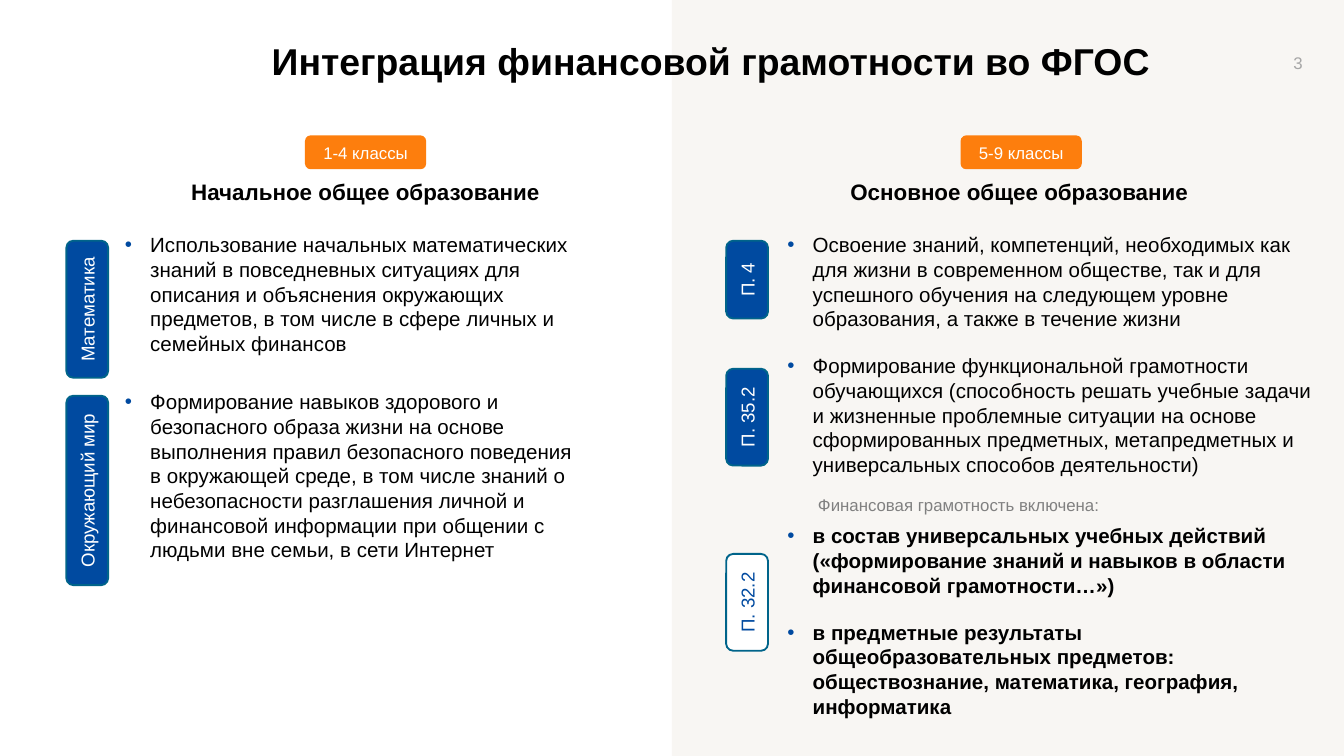
from lxml import etree
from pptx import Presentation
from pptx.dml.color import RGBColor
from pptx.enum.shapes import MSO_SHAPE
from pptx.enum.text import MSO_ANCHOR, PP_ALIGN
from pptx.oxml.ns import qn
from pptx.util import Cm, Pt

RECT, ROUNDED = MSO_SHAPE.RECTANGLE, MSO_SHAPE.ROUNDED_RECTANGLE
LEFT, CENTER, RIGHT = PP_ALIGN.LEFT, PP_ALIGN.CENTER, PP_ALIGN.RIGHT
TOP, MIDDLE = MSO_ANCHOR.TOP, MSO_ANCHOR.MIDDLE
BLACK, WHITE, BLUE, TEAL = "000000", "FFFFFF", "004AA0", "00648A"
ORANGE, CREAM, GREY, LIGHT_GREY = "FD7E0D", "F8F6F3", "808080", "A6A6A6"


def rgb(color):
    return RGBColor.from_string(color)


def write(p, text, size, color=BLACK, bold=False, align=LEFT):
    """Add one formatted run to a paragraph."""
    p.alignment = align
    r = p.add_run()
    r.text = text
    r.font.name = "Arial"
    r.font.size = Pt(size)
    r.font.bold = bold
    r.font.color.rgb = rgb(color)


prs = Presentation()
prs.slide_width, prs.slide_height = Cm(25.4), Cm(14.29)
s = prs.slides.add_slide(prs.slide_layouts[5])

# Right half background, behind the title
panel = s.shapes.add_shape(RECT, Cm(12.7), 0, Cm(12.7), prs.slide_height)
panel.shadow.inherit = False
panel.fill.solid()
panel.fill.fore_color.rgb = rgb(CREAM)
panel.line.fill.background()
s.shapes._spTree.insert(2, panel._element)

title = s.shapes.title
title.left, title.top, title.width, title.height = Cm(4.88), Cm(0.61), Cm(18.24), Cm(1.19)
title.text_frame.vertical_anchor = MIDDLE
title.text_frame.paragraphs[0].line_spacing = 0.9
write(title.text_frame.paragraphs[0], "Интеграция финансовой грамотности во ФГОС", 20, bold=True)

# Single-line texts: page number, column headings, note
for text, x, y, w, h, size, color, bold, align, anchor in [
    ("3", 23.65, 0.81, 1.22, 0.76, 9, LIGHT_GREY, False, RIGHT, MIDDLE),
    ("Начальное общее образование", 3.33, 3.25, 7.16, 0.76, 12, BLACK, True, CENTER, TOP),
    ("Основное общее образование", 15.82, 3.25, 6.96, 0.76, 12, BLACK, True, LEFT, TOP),
    ("Финансовая грамотность включена:", 15.21, 9.22, 5.89, 0.64, 9, GREY, False, LEFT, TOP),
]:
    tf = s.shapes.add_textbox(Cm(x), Cm(y), Cm(w), Cm(h)).text_frame
    tf.vertical_anchor = anchor
    write(tf.paragraphs[0], text, size, color, bold, align)

# Bulleted columns: (text, bold, space before)
primary = [
    ("Использование начальных математических знаний в повседневных ситуациях для описания "
     "и объяснения окружающих предметов, в том числе в сфере личных и семейных финансов", False, 0),
    ("Формирование навыков здорового и безопасного образа жизни на основе выполнения правил "
     "безопасного поведения в окружающей среде, в том числе знаний о небезопасности разглашения "
     "личной и финансовой информации при общении с людьми вне семьи, в сети Интернет", False, 18),
]
secondary = [
    ("Освоение знаний, компетенций, необходимых как для жизни в современном обществе, так и для "
     "успешного обучения на следующем уровне образования, а также в течение жизни", False, 0),
    ("Формирование функциональной грамотности обучающихся (способность решать учебные задачи "
     "и жизненные проблемные ситуации на основе сформированных предметных, метапредметных "
     "и универсальных способов деятельности)", False, 12),
    ("в состав универсальных учебных действий («формирование знаний и навыков в области "
     "финансовой грамотности…»)", True, 25),
    ("в предметные результаты общеобразовательных предметов: обществознание, математика, "
     "география, информатика", True, 12),
]
for x, w, h, items in [(2.11, 9.17, 6.53, primary), (14.63, 10.44, 9.53, secondary)]:
    tf = s.shapes.add_textbox(Cm(x), Cm(4.27), Cm(w), Cm(h)).text_frame
    tf.word_wrap = True
    for i, (text, bold, gap) in enumerate(items):
        p = tf.paragraphs[0] if i == 0 else tf.add_paragraph()
        pPr = p._p.get_or_add_pPr()
        pPr.set("marL", str(Cm(0.48)))
        pPr.set("indent", str(-Cm(0.48)))
        clr = etree.SubElement(pPr, qn("a:buClr"))
        etree.SubElement(clr, qn("a:srgbClr"), val=BLUE)
        etree.SubElement(pPr, qn("a:buFont"), typeface="Arial")
        etree.SubElement(pPr, qn("a:buChar"), char="•")
        p.space_before = Pt(gap)
        write(p, text, 11, bold=bold)

# Badges: (text, centre x, centre y, length, thickness, rotation, size, fill, line, text colour)
badges = [(text, x, 2.88, 2.29, 0.64, 0, 9, ORANGE, None, WHITE)
          for text, x in [("1-4 классы", 6.91), ("5-9 классы", 19.3)]]
badges += [(text, x, top + length / 2, length, 0.79, 270, 10, fill, TEAL, color)
           for text, x, top, length, fill, color in [
               ("Математика", 1.65, 4.55, 2.59, BLUE, WHITE),
               ("Окружающий мир", 1.65, 7.48, 3.58, BLUE, WHITE),
               ("П. 4", 14.12, 4.55, 1.47, BLUE, WHITE),
               ("П. 35.2", 14.12, 6.97, 1.83, BLUE, WHITE),
               ("П. 32.2", 14.12, 10.47, 1.83, WHITE, BLUE)]]
for text, cx, cy, w, h, rotation, size, fill, line, color in badges:
    sp = s.shapes.add_shape(ROUNDED, Cm(cx - w / 2), Cm(cy - h / 2), Cm(w), Cm(h))
    sp.rotation = rotation
    sp.shadow.inherit = False
    sp.fill.solid()
    sp.fill.fore_color.rgb = rgb(fill)
    if line:
        sp.line.color.rgb = rgb(line)
        sp.line.width = Pt(1)
    else:
        sp.line.fill.background()
    tf = sp.text_frame
    tf.word_wrap = False
    tf.vertical_anchor = MIDDLE
    write(tf.paragraphs[0], text, size, color, align=CENTER)

prs.save("out.pptx")
